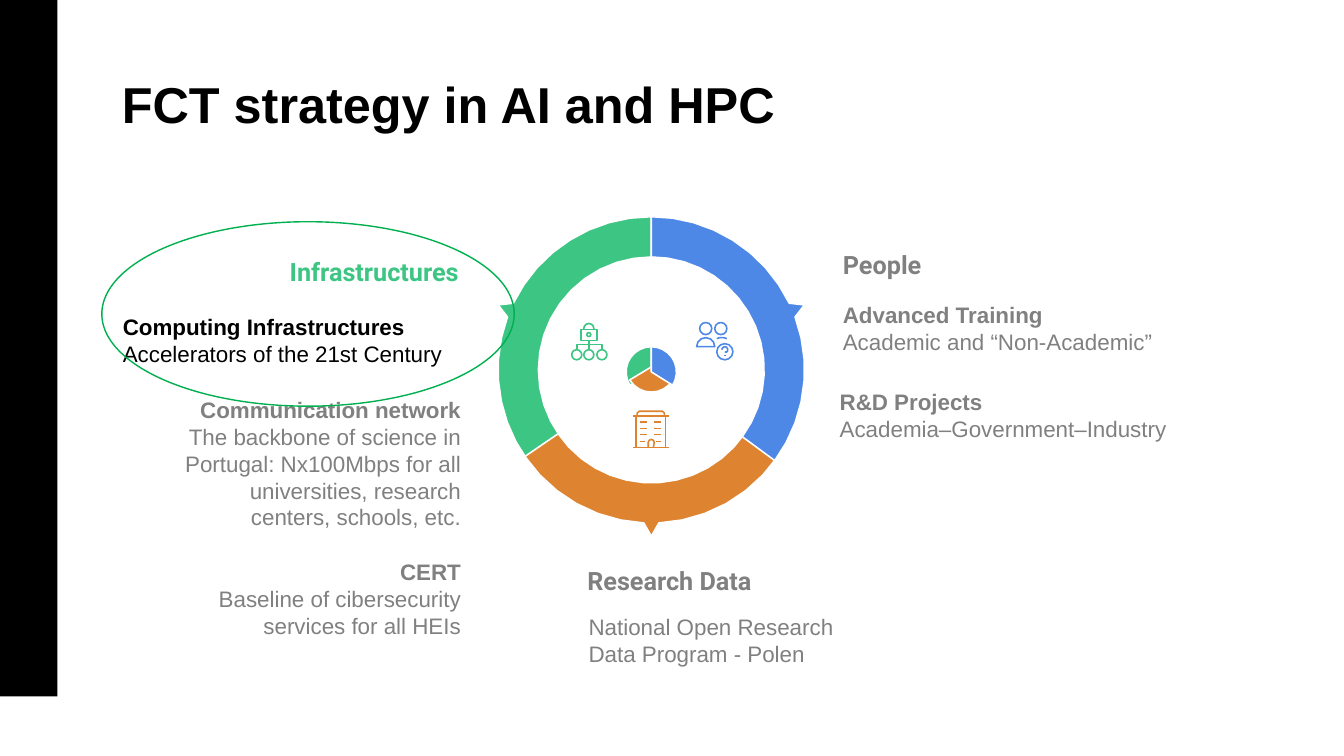
from dataclasses import dataclass
from math import ceil, cos, radians, sin

from pptx import Presentation
from pptx import util as u
from pptx.dml.color import RGBColor
from pptx.enum import shapes, text
from pptx.shapes.autoshape import Shape
from pptx.slide import Slide

BLACK = RGBColor(0, 0, 0)
WHITE = RGBColor(0xFF, 0xFF, 0xFF)
GRAY = RGBColor(0x80, 0x80, 0x80)
GREEN = RGBColor(0x3C, 0xC5, 0x83)
ORANGE = RGBColor(0xDE, 0x84, 0x31)
BLUE = RGBColor(0x4E, 0x88, 0xE7)
OVAL = RGBColor(0x00, 0xB0, 0x50)

LEFT, MID, RIGHT = text.PP_ALIGN.LEFT, text.PP_ALIGN.CENTER, text.PP_ALIGN.RIGHT
TOP, LOW = text.MSO_ANCHOR.TOP, text.MSO_ANCHOR.BOTTOM

Point = tuple[float, float]
Box = tuple[float, float, float, float]
HUB_X, HUB_Y = 6.46, 3.67
OUTER, INNER, TIP, CORE = 1.52, 1.12, 1.65, 0.25


@dataclass
class Stroke:
    points: list[Point]
    closed: bool = False


@dataclass
class Sector:
    """Ring part and hub wedge; angles run clockwise from the right."""
    color: RGBColor
    start: float
    end: float
    point: float
    core_y: float
    core_start: float
    core_end: float


@dataclass
class Icon:
    color: RGBColor
    strokes: list[Stroke]


@dataclass
class Label:
    box: Box
    lines: list[tuple[str, bool]]
    color: RGBColor = GRAY
    size: float = 16
    font: str = "Arial"
    align: text.PP_ALIGN = LEFT
    pad: bool = True
    anchor: text.MSO_ANCHOR = TOP
    leading: float = 1.0
    fill: RGBColor | None = None


def polar(x: float, y: float, r: float, angle: float) -> Point:
    return x + r * cos(radians(angle)), y + r * sin(radians(angle))


def arc(x: float, y: float, r: float, start: float, end: float) -> list[Point]:
    """Points along an arc, spaced more widely on a smaller radius."""
    stride = 9 if r > 1 else 15 if r > 0.2 else 30 if r > 0.04 else 45
    steps = ceil(abs(end - start) / stride)
    return [polar(x, y, r, start + (end - start) * i / steps) for i in range(steps + 1)]


def ring(x: float, y: float, r: float) -> Stroke:
    return Stroke(arc(x, y, r, 0, 360)[:-1], True)


def line(*points: Point) -> Stroke:
    return Stroke(list(points))


def draw(slide: Slide, strokes: list[Stroke], edge: RGBColor,
         fill: RGBColor | None = None) -> None:
    """Draw all strokes as one freeform."""
    pen = None
    for stroke in strokes:
        spots = [(u.Inches(x), u.Inches(y)) for x, y in stroke.points]
        if pen is None:
            pen = slide.shapes.build_freeform(*spots[0])
        else:
            pen.move_to(*spots[0])
        pen.add_line_segments(spots[1:], close=stroke.closed)
    paint(pen.convert_to_shape(), fill, edge, 1.12)


def paint(shape: Shape, fill: RGBColor | None, edge: RGBColor | None,
          width: float = 0.75) -> None:
    shape.shadow.inherit = False
    if fill is None:
        shape.fill.background()
    else:
        shape.fill.solid()
        shape.fill.fore_color.rgb = fill
    if edge is None:
        shape.line.fill.background()
    else:
        shape.line.color.rgb = edge
        shape.line.width = u.Pt(width)


def add_sector(slide: Slide, part: Sector) -> None:
    band = (arc(HUB_X, HUB_Y, OUTER, part.start, part.point - 2.8)
            + [polar(HUB_X, HUB_Y, TIP, part.point)]
            + arc(HUB_X, HUB_Y, OUTER, part.point + 2.8, part.end)
            + arc(HUB_X, HUB_Y, INNER, part.end, part.start))
    wedge = arc(HUB_X, part.core_y, CORE, part.core_start, part.core_end)
    wedge.append((HUB_X, part.core_y))
    draw(slide, [Stroke(band, True), Stroke(wedge, True)], WHITE, part.color)


def add_shape(slide: Slide, kind: shapes.MSO_SHAPE, box: Box, fill: RGBColor | None,
              edge: RGBColor | None, width: float = 0.75) -> None:
    shape = slide.shapes.add_shape(kind, *map(u.Inches, box))
    paint(shape, fill, edge, width)


def add_label(slide: Slide, label: Label) -> None:
    shape = slide.shapes.add_textbox(*map(u.Inches, label.box))
    if label.fill is not None:
        paint(shape, label.fill, label.fill)
    frame = shape.text_frame
    frame.word_wrap = True
    frame.vertical_anchor = label.anchor
    if not label.pad:
        frame.margin_left = frame.margin_right = 0
        frame.margin_top = frame.margin_bottom = 0
    for i, (words, bold) in enumerate(label.lines):
        para = frame.paragraphs[0] if i == 0 else frame.add_paragraph()
        para.alignment = label.align
        para.line_spacing = label.leading
        run = para.add_run()
        run.text = words
        run.font.name = label.font
        run.font.size = u.Pt(label.size)
        run.font.bold = bold
        run.font.color.rgb = label.color


def head(words: str, box: Box, color: RGBColor, align: text.PP_ALIGN) -> Label:
    return Label(box, [(words, True)], color, 18, "Roboto", align, pad=False)


SECTORS = [
    Sector(GREEN, 144, 270, 203, 3.69, 148, 270),
    Sector(ORANGE, 34.4, 145.6, 90, 3.64, 31, 149),
    Sector(BLUE, -90, 36.3, -23, 3.69, -90, 32),
]
LOCK = Icon(GREEN, [
    line((5.72, 3.47), (5.72, 3.42), (5.97, 3.42), (5.97, 3.47)),
    line((5.84, 3.38), (5.84, 3.47)),
    *[ring(x, 3.52, 0.05) for x in (5.72, 5.84, 5.97)],
    Stroke([(5.76, 3.27), (5.92, 3.27), (5.92, 3.38), (5.76, 3.38)], True),
    ring(5.84, 3.32, 0.02),
    line((5.79, 3.27), *arc(5.84, 3.26, 0.05, 180, 360), (5.89, 3.27)),
])
CROWD = Icon(BLUE, [
    ring(7.19, 3.49, 0.08),
    line(*arc(7.19, 3.47, 0.03, 180, 420), (7.19, 3.49)),
    line((7.19, 3.52), (7.19, 3.53)),
    Stroke(arc(7, 3.44, 0.09, 180, 360), True),
    ring(7, 3.26, 0.06),
    ring(7.15, 3.26, 0.06),
    line((7.11, 3.36), (7.14, 3.35), (7.18, 3.35), (7.21, 3.36)),
])
HOUSE = Icon(ORANGE, [
    line((6.28, 4.44), (6.64, 4.44)),
    line((6.28, 4.13), (6.64, 4.13)),
    Stroke([(6.31, 4.13), (6.6, 4.13), (6.6, 4.44), (6.31, 4.44)], True),
    line((6.32, 4.13), (6.32, 4.1), (6.34, 4.08), (6.57, 4.08), (6.59, 4.1), (6.59, 4.13)),
    line((6.43, 4.44), *arc(6.46, 4.39, 0.03, 180, 360), (6.48, 4.44)),
    *[line((x, y), (x + 0.07, y)) for y in (4.19, 4.25, 4.31) for x in (6.35, 6.49)],
    *[line((x, 4.38), (x + 0.05, 4.38)) for x in (6.35, 6.51)],
])

LABELS = [
    Label((1.11, 0, 11.61, 1.38), [("FCT strategy in AI and HPC", True)], BLACK, 36,
          anchor=LOW, leading=0.9),
    head("Infrastructures", (2.12, 2.54, 2.43, 0.3), GREEN, RIGHT),
    head("People", (8.36, 2.47, 2.09, 0.3), GRAY, LEFT),
    head("Research Data", (4.92, 5.61, 3.44, 0.61), GRAY, MID),
    Label((8.36, 2.99, 3.87, 0.81), [("Advanced Training", True),
          ("Academic and “Non-Academic”", False)], pad=False, fill=WHITE),
    Label((8.23, 3.8, 3.74, 0.64), [("R&D Projects", True),
          ("Academia–Government–Industry", False)]),
    Label((5.74, 6.03, 3, 0.91), [("National Open Research Data Program - Polen", False)]),
    Label((1.67, 3.88, 3, 1.45), [("Communication network", True),
          ("The backbone of science in Portugal: Nx100Mbps for all universities, "
           "research centers, schools, etc.", False)], align=RIGHT),
    Label((1.12, 3.06, 3.56, 0.91), [("Computing Infrastructures", True),
          ("Accelerators of the 21st Century", False)], BLACK),
    Label((1.67, 5.49, 3, 0.91), [("CERT", True),
          ("Baseline of cibersecurity services for all HEIs", False)], align=RIGHT),
]


def main() -> None:
    deck = Presentation()
    deck.slide_width, deck.slide_height = u.Inches(13.33), u.Inches(7.5)
    slide = deck.slides.add_slide(deck.slide_layouts[6])
    add_shape(slide, shapes.MSO_SHAPE.RECTANGLE, (0, 0, 0.57, 6.91), BLACK, None)
    for part in SECTORS:
        add_sector(slide, part)
    for icon in (LOCK, CROWD, HOUSE):
        draw(slide, icon.strokes, icon.color)
    for label in LABELS:
        add_label(slide, label)
    add_shape(slide, shapes.MSO_SHAPE.OVAL, (1.01, 2.2, 4.09, 1.83), None, OVAL, 1)
    deck.save("out.pptx")


if __name__ == "__main__":
    main()
